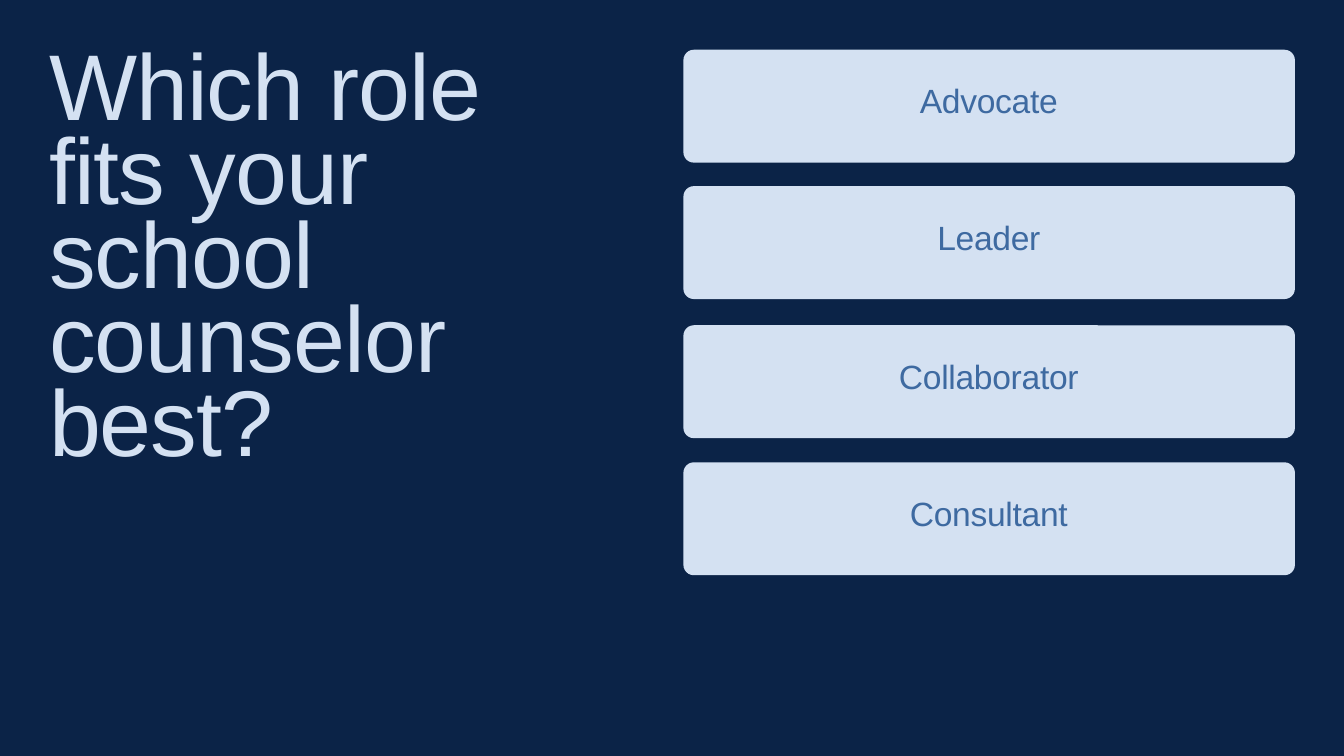
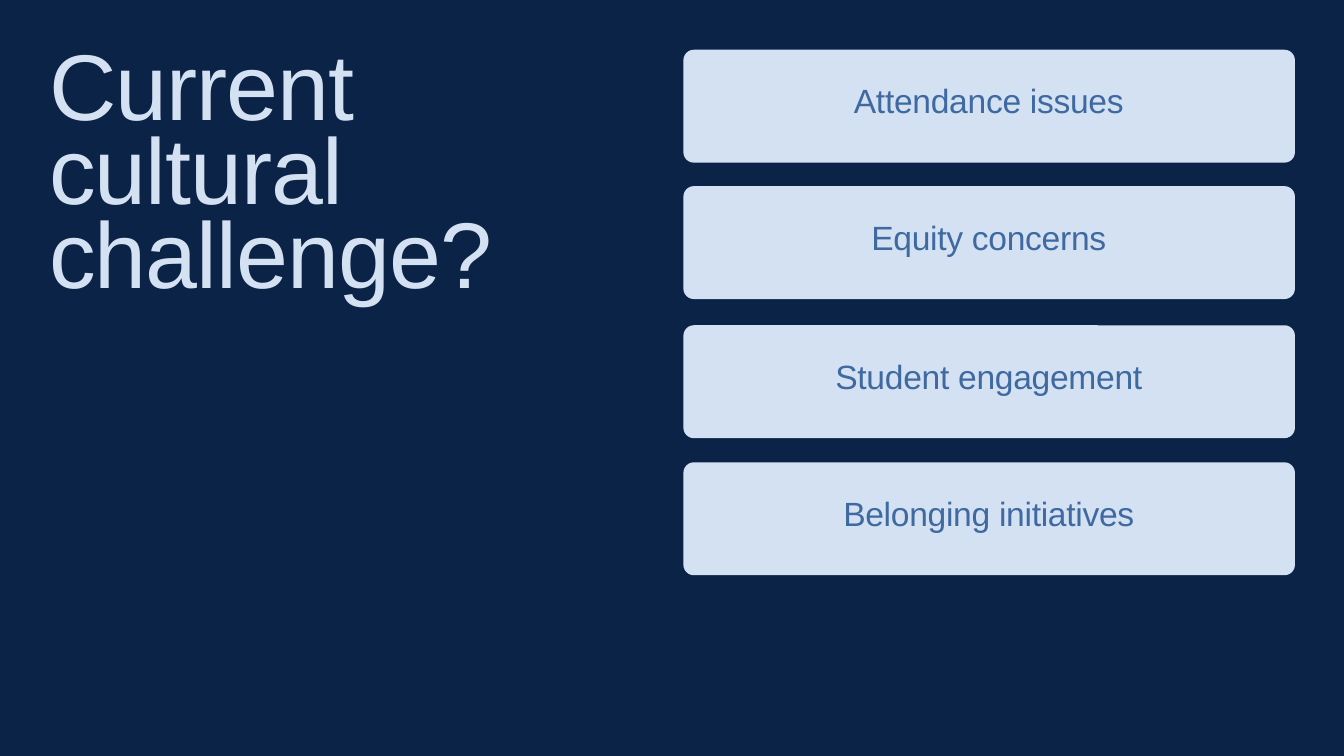
from dataclasses import dataclass
from typing import Any

from pptx import Presentation
from pptx.dml.color import RGBColor
from pptx.enum.shapes import MSO_SHAPE as Shape
from pptx.enum.text import MSO_AUTO_SIZE as AutoSize, PP_ALIGN as Align
from pptx.util import Inches, Pt


@dataclass(frozen=True)
class TextStyle:
    size: float
    leading: float
    tracking: float
    color: RGBColor
    align: Align


@dataclass(frozen=True)
class Theme:
    font: str = "Arial"
    navy: RGBColor = RGBColor.from_string("0B2347")
    pale: RGBColor = RGBColor.from_string("D4E1F2")
    blue: RGBColor = RGBColor.from_string("3E6AA1")
    title: TextStyle = TextStyle(100, 90, -1, pale, Align.LEFT)
    option: TextStyle = TextStyle(36, 33.6, -0.3, blue, Align.CENTER)


@dataclass(frozen=True)
class Box:
    left: float
    top: float
    width: float
    height: float

    def emu(self) -> tuple[int, ...]:
        return tuple(Inches(v) for v in (self.left, self.top, self.width, self.height))


@dataclass(frozen=True)
class Poll:
    question: str
    lines: int
    options: tuple[str, ...]


THEME = Theme()
CARD_TOPS = (0.74, 2.77, 4.84, 6.88)
CARD_RADIUS = 0.155
LABEL_DROP = 0.585
POLLS = (
    Poll("Which role fits your school counselor best?", 5,
         ("Advocate", "Leader", "Collaborator", "Consultant")),
    Poll("Current cultural challenge?", 3,
         ("Attendance issues", "Equity concerns", "Student engagement", "Belonging initiatives")),
)


def apply(target: Any, formats: dict[str, Any]) -> None:
    for name, value in formats.items():
        setattr(target, name, value)


def add_text(s: Any, box: Box, text: str, style: TextStyle) -> None:
    tf = s.shapes.add_textbox(*box.emu()).text_frame
    apply(tf, {"margin_left": 0, "margin_top": 0, "margin_right": 0, "margin_bottom": 0,
               "word_wrap": True, "auto_size": AutoSize.SHAPE_TO_FIT_TEXT})
    p = tf.paragraphs[0]
    apply(p, {"alignment": style.align, "line_spacing": Pt(style.leading)})
    r = p.add_run()
    r.text = text
    apply(r.font, {"name": THEME.font, "size": Pt(style.size)})
    r.font.color.rgb = style.color
    r._r.get_or_add_rPr().set("spc", str(round(style.tracking * 100)))


def add_card(s: Any, box: Box) -> None:
    sp = s.shapes.add_shape(Shape.ROUNDED_RECTANGLE, *box.emu())
    sp.adjustments[0] = CARD_RADIUS / box.height
    sp.shadow.inherit = False
    sp.fill.solid()
    sp.fill.fore_color.rgb = THEME.pale
    sp.line.fill.background()


def add_poll(prs: Any, poll: Poll) -> None:
    s = prs.slides.add_slide(prs.slide_layouts[6])
    s.background.fill.solid()
    s.background.fill.fore_color.rgb = THEME.navy
    title_height = poll.lines * THEME.title.leading / 72 + 0.32
    add_text(s, Box(0.73, 0.82, 7.53, title_height), poll.question, THEME.title)
    for top in CARD_TOPS:
        add_card(s, Box(10.17, top, 9.1, 1.68))
    for top, option in zip(CARD_TOPS, poll.options):
        add_text(s, Box(10.86, top + LABEL_DROP, 7.71, 0.48), option, THEME.option)


def main() -> None:
    prs = Presentation()
    apply(prs, {"slide_width": Inches(20), "slide_height": Inches(11.25)})
    for poll in POLLS:
        add_poll(prs, poll)
    prs.save("out.pptx")


if __name__ == "__main__":
    main()
